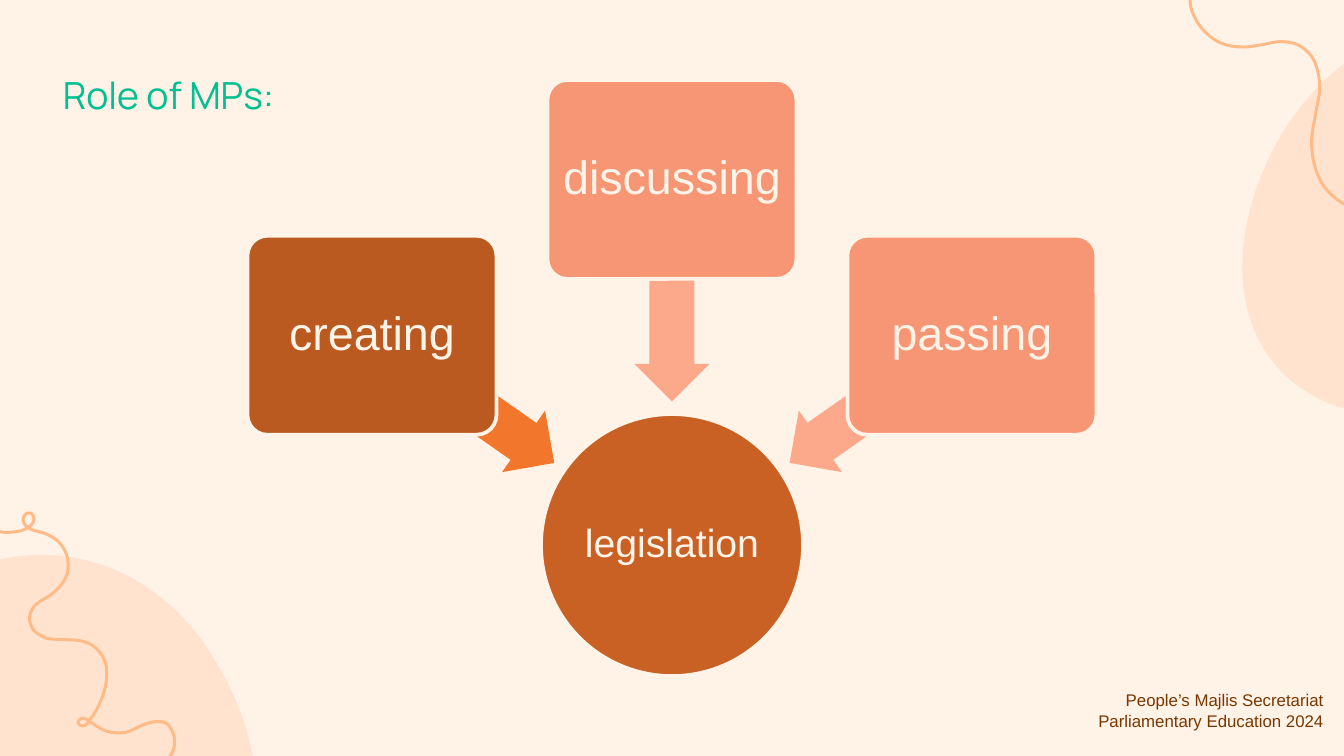
import math
import pptx
import pptx.util
import pptx.dml.color
import pptx.enum.shapes
import pptx.enum.text
import pptx.oxml
import pptx.oxml.ns

Pt = pptx.util.Pt
RGBColor = pptx.dml.color.RGBColor
SHAPE = pptx.enum.shapes.MSO_SHAPE
ALIGN = pptx.enum.text.PP_ALIGN
ANCHOR = pptx.enum.text.MSO_ANCHOR
FIT = pptx.enum.text.MSO_AUTO_SIZE
qn = pptx.oxml.ns.qn

CREAM = RGBColor(0xFF, 0xF2, 0xE7)
PEACH = RGBColor(0xFF, 0xBA, 0x86)
GREEN = RGBColor(0x00, 0xC0, 0x91)
BROWN = RGBColor(0x79, 0x37, 0x00)
RUST = RGBColor(0xBA, 0x59, 0x20)
COPPER = RGBColor(0xC9, 0x60, 0x24)
ORANGE = RGBColor(0xF3, 0x76, 0x2D)
CORAL = RGBColor(0xF6, 0x96, 0x74)
SALMON = RGBColor(0xFC, 0xA8, 0x8A)

TITLE = ["Role of MPs:"]
FOOTER = ["People’s Majlis Secretariat", "Parliamentary Education 2024"]
GOAL = "legislation"
ROLES = [
    {"word": "creating", "side": -1, "top": 126.3, "box": RUST,
     "arrow": ORANGE, "arrow_middle": 213.9, "turn": 215},
    {"word": "discussing", "side": 0, "top": 42.8, "box": CORAL,
     "arrow": SALMON, "arrow_middle": 155.6, "turn": 270},
    {"word": "passing", "side": 1, "top": 126.3, "box": CORAL,
     "arrow": SALMON, "arrow_middle": 213.9, "turn": 325},
]

CENTRE = 360
BOX_STEP, BOX_WIDTH, BOX_HEIGHT = 160.7, 133.4, 106.6
ARROW_STEP, ARROW_WIDTH, ARROW_HEIGHT = 111.7, 118.8, 40.2
GOAL_TOP, GOAL_SIZE = 221.8, 140.4

LOWER_SQUIGGLE = [
    (-15, 274), (-9.7, 280), (-2.2, 284.4), (6.5, 285.1), (13, 283.7),
    (16.6, 281.5), (18.2, 278.5), (16.9, 275.1), (14.4, 275), (12.3, 278.6),
    (14.6, 282.4), (17, 283.7), (24.1, 285.8), (31.7, 290.5),
    (36, 298.4), (36, 307.4), (31, 315.4), (25.6, 319.7), (22, 321.8),
    (17.6, 325.8), (15.8, 330.5), (17.6, 337), (23.4, 341.3), (36, 342.7),
    (43, 343.3), (49.3, 345.6), (56.2, 354.2), (56.9, 365.4), (53.8, 376),
    (47.9, 386), (45.4, 388.8), (42.5, 388.4), (41.8, 387), (42.5, 385.6),
    (44.6, 384.8), (48.6, 387), (56.9, 391.7), (67, 392.4), (77.4, 388.1),
    (83.5, 386.6), (88.9, 387.4), (92.9, 393.1), (93.2, 400.7), (90, 406.8),
    (84.6, 412.2),
]
UPPER_SQUIGGLE = [
    (636.5, -6.5), (638.6, 6), (644.4, 15.8), (654.4, 23.2), (666, 25.2),
    (676.8, 23.8), (686.2, 22.3), (694.8, 23.8), (702.7, 30.2), (706.3, 39.6),
    (707, 47.5), (704.9, 60.5), (702.7, 76.3), (704.9, 90.7), (709.2, 99.7),
    (716.4, 106.9), (725, 112.3),
]
RIGHT_BLOB = [
    (802.1, 216.7), (817.2, 211.7), (832.3, 204.5),
    (843.8, 195.1), (887.8, 159.8), (895, 96.5),
    (860.4, 52.6), (833, 18), (788.4, 5.8),
    (749.5, 18.7), (738, 22.3), (727.2, 28.1),
    (717.8, 36), (673.2, 70.6), (646.6, 149.8),
    (681.8, 193.7), (707, 226.1), (758.9, 230.4),
    (802.1, 216.7),
]
LEFT_BLOB = [
    (115.9, 355), (108, 341.3), (97.2, 328.3),
    (85.7, 319.7), (41.8, 284.4), (-22.3, 291.6),
    (-56.9, 335.5), (-84.2, 370.1), (-85.7, 416.2),
    (-64.8, 451.4), (-58.3, 461.5), (-50.4, 470.9),
    (-40.3, 478.8), (3.6, 513.4), (86.4, 521.3),
    (121.7, 477.4), (146.9, 445), (139.7, 393.8),
    (115.9, 355),
]


def set_all(target, values):
    for key, value in values.items():
        setattr(target, key, value)


def slope(before, knot, after):
    back, ahead = math.dist(before, knot), math.dist(knot, after)
    return [((k - b) / back * ahead + (a - k) / ahead * back) / (back + ahead)
            for b, k, a in zip(before, knot, after)]


def smooth_controls(knots):
    inner = [slope(*three) for three in zip(knots, knots[1:], knots[2:])]
    slopes = [inner[0], *inner, inner[-1]]
    controls = [knots[0]]
    for start, end, leaving, arriving in zip(knots, knots[1:], slopes, slopes[1:]):
        reach = math.dist(start, end) / 3
        controls.append(tuple(s + d * reach for s, d in zip(start, leaving)))
        controls.append(tuple(e - d * reach for e, d in zip(end, arriving)))
        controls.append(end)
    return controls


def draw_curve(slide, controls, closed):
    points = [(Pt(x), Pt(y)) for x, y in controls]
    builder = slide.shapes.build_freeform(*points[0], scale=1.0)
    builder.add_line_segments(points[1:], close=closed)
    curve = builder.convert_to_shape()
    curve.shadow.inherit = False
    segments = list(curve._element.iter(qn("a:lnTo")))
    for first in range(0, len(segments), 3):
        bend, *others = segments[first:first + 3]
        bend.tag = qn("a:cubicBezTo")
        for other in others:
            bend.append(other[0])
            other.getparent().remove(other)
    return curve


def draw_squiggle(slide, knots):
    squiggle = draw_curve(slide, smooth_controls(knots), False)
    squiggle.fill.background()
    squiggle.line.color.rgb = PEACH
    squiggle.line.width = Pt(1.6)


def draw_blob(slide, controls):
    blob = draw_curve(slide, controls, True)
    blob.fill.solid()
    blob.fill.fore_color.rgb = PEACH
    blob.line.fill.background()
    colour = blob._element.spPr.find(qn("a:solidFill")).find(qn("a:srgbClr"))
    colour.append(pptx.oxml.parse_xml(
        '<a:alpha xmlns:a="http://schemas.openxmlformats.org/drawingml/2006/main" val="25000"/>'))


def write(shape, lines, colour, font, paragraph_format, frame_format):
    frame = shape.text_frame
    set_all(frame, {"word_wrap": True, **frame_format})
    for index, line in enumerate(lines):
        paragraph = frame.paragraphs[0] if index == 0 else frame.add_paragraph()
        set_all(paragraph, paragraph_format)
        run = paragraph.add_run()
        run.text = line
        set_all(run.font, font)
        run.font.color.rgb = colour


def draw_shape(slide, kind, box, fill, adjustments=(), outlined=True):
    shape = slide.shapes.add_shape(kind, *map(Pt, box))
    shape.shadow.inherit = False
    shape.fill.solid()
    shape.fill.fore_color.rgb = fill
    for index, value in enumerate(adjustments):
        shape.adjustments[index] = value
    if outlined:
        shape.line.color.rgb = CREAM
        shape.line.width = Pt(2)
    else:
        shape.line.fill.background()
    return shape


def write_word(shape, word, size):
    margins = {f"margin_{side}": Pt(0.7) for side in ("left", "top", "right", "bottom")}
    write(shape, [word], CREAM, {"name": "Arial", "size": Pt(size)},
          {"alignment": ALIGN.CENTER, "line_spacing": 0.9},
          {"vertical_anchor": ANCHOR.MIDDLE, **margins})


def main():
    deck = pptx.Presentation()
    set_all(deck, {"slide_width": Pt(720), "slide_height": Pt(405)})
    slide = deck.slides.add_slide(deck.slide_layouts[6])
    slide.background.fill.solid()
    slide.background.fill.fore_color.rgb = CREAM

    footer = slide.shapes.add_textbox(Pt(498.6), Pt(366.2), Pt(217.4), Pt(28.8))
    write(footer, FOOTER, BROWN, {"name": "Arial", "size": Pt(9)},
          {"alignment": ALIGN.RIGHT}, {"auto_size": FIT.SHAPE_TO_FIT_TEXT})
    for knots in (LOWER_SQUIGGLE, UPPER_SQUIGGLE):
        draw_squiggle(slide, knots)
    for controls in (RIGHT_BLOB, LEFT_BLOB):
        draw_blob(slide, controls)
    title = slide.shapes.add_textbox(Pt(26.6), Pt(31.4), Pt(607), Pt(45.4))
    write(title, TITLE, GREEN, {"name": "Manrope", "size": Pt(20)}, {},
          {"margin_top": Pt(7.2), "margin_bottom": Pt(7.2)})

    goal_box = (CENTRE - GOAL_SIZE / 2, GOAL_TOP, GOAL_SIZE, GOAL_SIZE)
    write_word(draw_shape(slide, SHAPE.OVAL, goal_box, COPPER), GOAL, 21)
    for role in ROLES:
        arrow_left = CENTRE + role["side"] * ARROW_STEP - ARROW_WIDTH / 2
        arrow_box = (arrow_left, role["arrow_middle"] - ARROW_HEIGHT / 2,
                     ARROW_WIDTH, ARROW_HEIGHT)
        arrow = draw_shape(slide, SHAPE.LEFT_ARROW, arrow_box, role["arrow"], (0.6, 0.5), False)
        arrow.rotation = role["turn"]
        role_left = CENTRE + role["side"] * BOX_STEP - BOX_WIDTH / 2
        role_box = (role_left, role["top"], BOX_WIDTH, BOX_HEIGHT)
        card = draw_shape(slide, SHAPE.ROUNDED_RECTANGLE, role_box, role["box"], (0.1,))
        write_word(card, role["word"], 25)

    deck.save("out.pptx")


if __name__ == "__main__":
    main()
